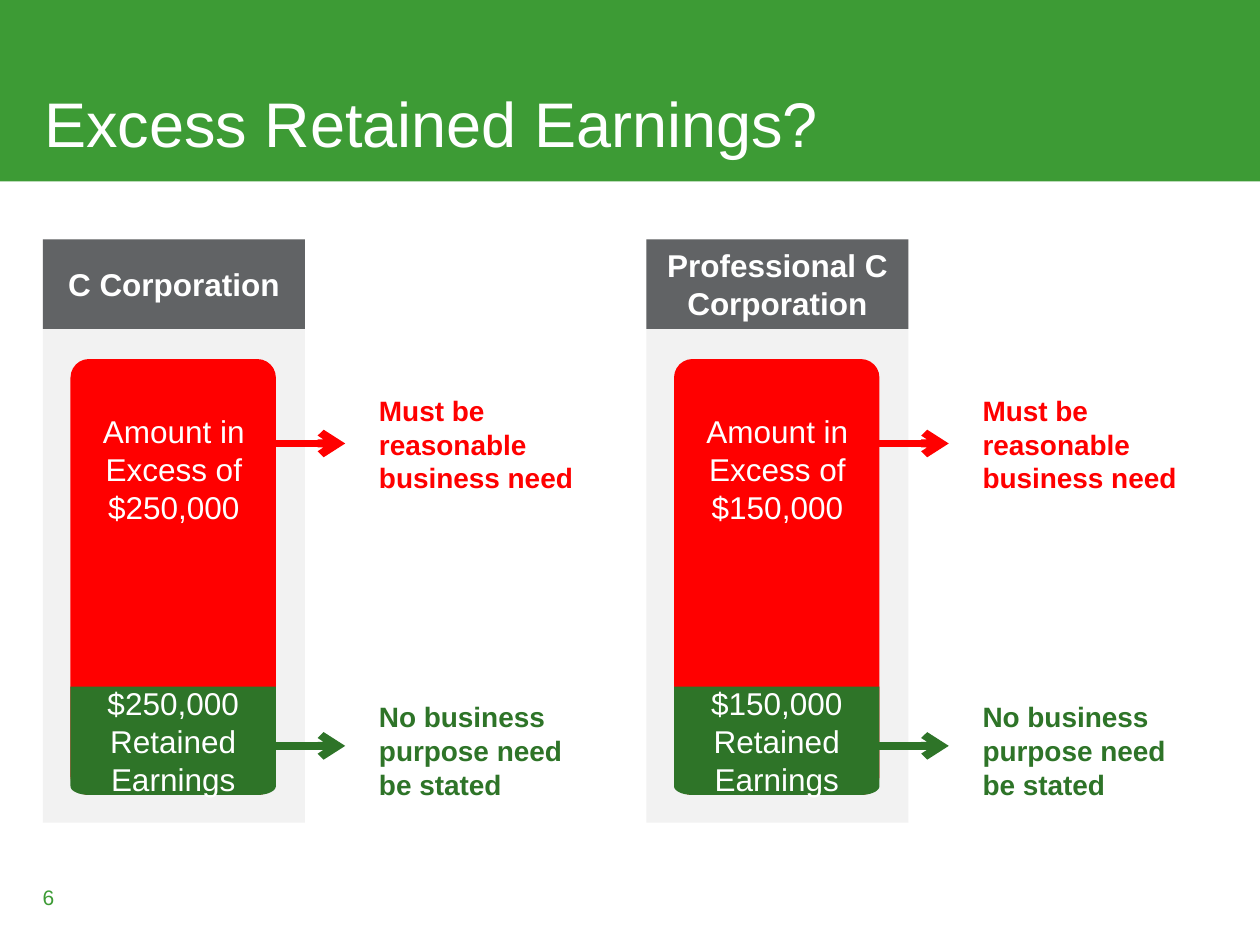
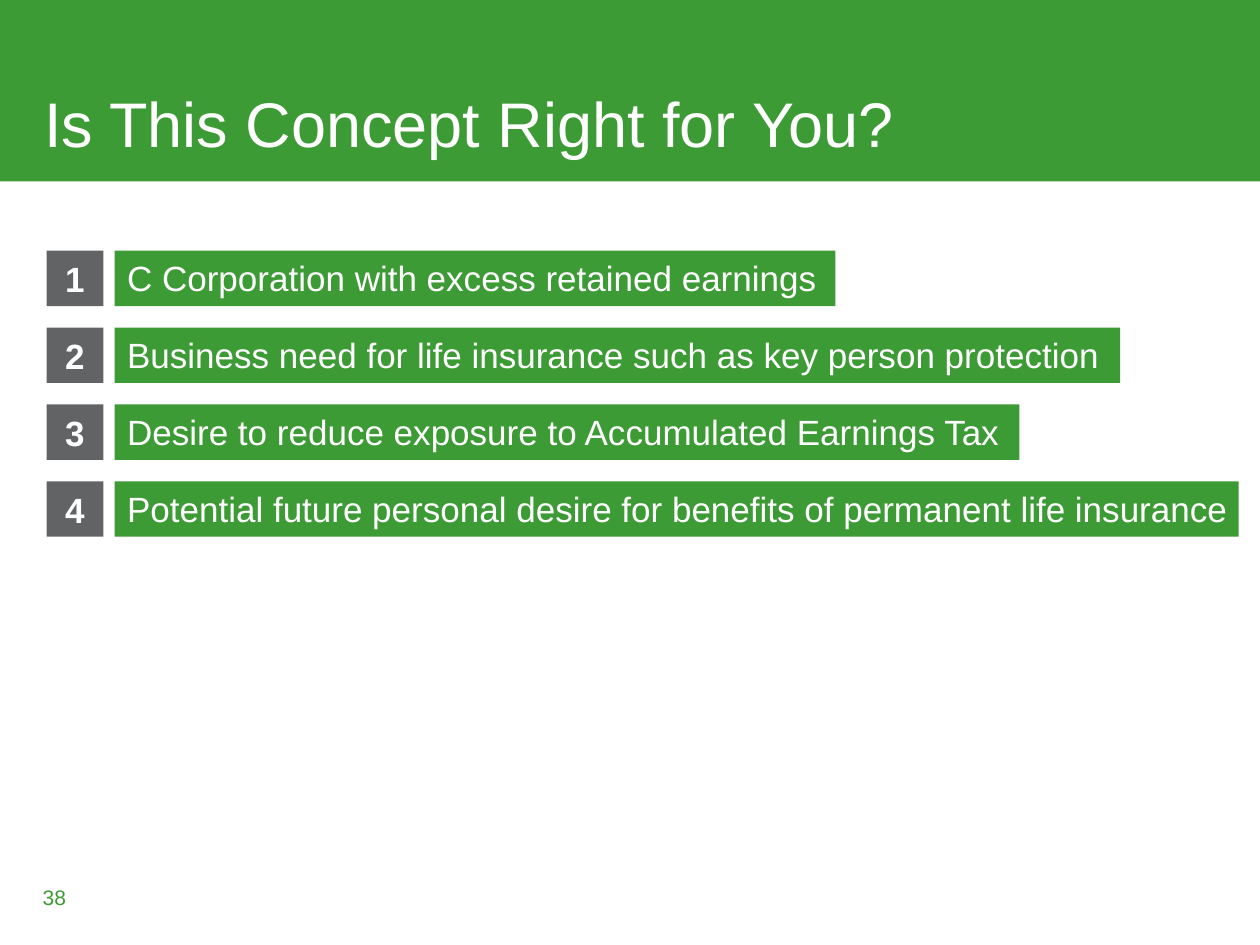
import math
from dataclasses import dataclass

from lxml import etree
from pptx import Presentation
from pptx.dml.color import RGBColor
from pptx.enum import shapes, text as text_enum
from pptx.oxml import parse_xml
from pptx.oxml.ns import qn
from pptx.util import Inches, Pt

GREEN = RGBColor(0x3D, 0x9B, 0x35)
DARK_GREEN = RGBColor(0x2E, 0x74, 0x28)
GREY = RGBColor(0x61, 0x63, 0x65)
PALE_GREY = RGBColor(0xF2, 0xF2, 0xF2)
RED = RGBColor(0xFF, 0x00, 0x00)
WHITE = RGBColor(0xFF, 0xFF, 0xFF)
FONT = "Arial"

ALIGN = text_enum.PP_ALIGN
ANCHOR = text_enum.MSO_ANCHOR
SHAPE = shapes.MSO_SHAPE

TEXT_SHADOW = (
    '<a:effectLst xmlns:a="http://schemas.openxmlformats.org/drawingml/2006/main">'
    '<a:outerShdw blurRad="38100" dist="38100" dir="2700000" algn="tl">'
    '<a:srgbClr val="000000"><a:alpha val="43000"/></a:srgbClr>'
    "</a:outerShdw></a:effectLst>"
)


@dataclass(frozen=True)
class Corporation:
    left: float
    heading: str
    limit: str


@dataclass(frozen=True)
class Callout:
    arrow_y: float
    text_top: float
    text: str
    color: RGBColor


@dataclass(frozen=True)
class Criterion:
    text: str
    width: float


CORPORATIONS = (
    Corporation(0.34, "C Corporation", "$250,000"),
    Corporation(5.13, "Professional C Corporation", "$150,000"),
)
CALLOUTS = (
    Callout(3.52, 3.07, "Must be reasonable business need", RED),
    Callout(5.92, 5.5, "No business purpose need be stated", DARK_GREEN),
)
CRITERIA = (
    Criterion("C Corporation with excess retained earnings", 5.72),
    Criterion("Business need for life insurance such as key person protection", 7.98),
    Criterion("Desire to reduce exposure to Accumulated Earnings Tax", 7.18),
    Criterion(
        "Potential future personal desire for benefits of permanent life insurance", 8.92
    ),
)


def set_text(box, text: str, *, size: float = 18, color: RGBColor = WHITE,
             bold: bool = False, align=ALIGN.LEFT, anchor=ANCHOR.MIDDLE,
             line_spacing: float = 1.0, shadow: bool = False) -> None:
    frame = box.text_frame
    frame.word_wrap = True
    frame.auto_size = text_enum.MSO_AUTO_SIZE.NONE
    frame.vertical_anchor = anchor
    para = frame.paragraphs[0]
    para.alignment = align
    para.line_spacing = line_spacing
    span = para.add_run()
    span.text = text
    span.font.name = FONT
    span.font.size = Pt(size)
    span.font.bold = bold
    span.font.color.rgb = color
    if shadow:
        fill = span.font._element.find(qn("a:solidFill"))
        fill.addnext(parse_xml(TEXT_SHADOW))


def paint(shape, color: RGBColor) -> None:
    """Give the shape a flat fill, without outline or shadow."""
    shape.shadow.inherit = False
    shape.fill.solid()
    shape.fill.fore_color.rgb = color
    shape.line.fill.background()


def add_block(page, left: float, top: float, width: float, height: float,
              color: RGBColor, kind=SHAPE.RECTANGLE):
    block = page.shapes.add_shape(
        kind, Inches(left), Inches(top), Inches(width), Inches(height))
    paint(block, color)
    return block


def add_text_box(page, left: float, top: float, width: float, height: float,
                 text: str, **text_format) -> None:
    box = page.shapes.add_textbox(
        Inches(left), Inches(top), Inches(width), Inches(height))
    set_text(box, text, **text_format)


def add_arrow(page, left: float, y: float, length: float, color: RGBColor) -> None:
    arrow = page.shapes.add_connector(
        shapes.MSO_CONNECTOR.STRAIGHT,
        Inches(left), Inches(y), Inches(left + length), Inches(y))
    arrow.line.color.rgb = color
    arrow.line.width = Pt(4.5)
    properties = arrow.element.spPr
    etree.SubElement(properties.find(qn("a:ln")), qn("a:tailEnd"), type="arrow")
    etree.SubElement(properties, qn("a:effectLst"))


def add_rounded_base(page, left: float, top: float, width: float, height: float):
    """Draw the green foot of a bar: square on top, elliptical corners below."""
    radius_x, radius_y, steps = 0.15, 0.07, 12
    right, bottom = left + width, top + height
    angles = [math.pi / 2 * step / steps for step in range(steps + 1)]
    right_corner = [
        (right - radius_x * (1 - math.cos(angle)),
         bottom - radius_y * (1 - math.sin(angle)))
        for angle in angles
    ]
    left_corner = [(left + right - x, y) for x, y in reversed(right_corner)]
    outline = [(right, top), *right_corner, *left_corner]
    builder = page.shapes.build_freeform(Inches(left), Inches(top))
    builder.add_line_segments([(Inches(x), Inches(y)) for x, y in outline], close=True)
    base = builder.convert_to_shape()
    paint(base, DARK_GREEN)
    return base


def add_page(deck, layout, title: str, number: int):
    page = deck.slides.add_slide(layout)
    set_text(page.shapes.title, title, size=36, anchor=ANCHOR.BOTTOM, line_spacing=0.9)
    add_text_box(page, 0.24, 6.92, 0.56, 0.4, str(number), size=12, color=GREEN)
    return page


def prepare_layout(layout) -> None:
    """Place the title for every page that uses the layout."""
    title = layout.placeholders[0]
    title.left, title.top = Inches(0.25), Inches(0.16)
    title.width, title.height = Inches(9.5), Inches(1.17)


def move_band_to_layout(page, layout) -> None:
    band = add_block(page, 0, 0, 10, 1.44, GREEN)
    layout.shapes.element.insert(2, band.element)


def add_corporation(page, corporation: Corporation) -> None:
    left = corporation.left
    bar_left, bar_width = left + 0.22, 1.63
    add_block(page, left, 1.9, 2.08, 4.63, PALE_GREY)
    heading = add_block(page, left, 1.9, 2.08, 0.71, GREY)
    set_text(heading, corporation.heading, bold=True, align=ALIGN.CENTER)

    bar = add_block(page, bar_left, 2.85, bar_width, 3.46, RED, SHAPE.ROUNDED_RECTANGLE)
    bar.adjustments[0] = 0.09
    base = add_rounded_base(page, bar_left, 5.45, bar_width, 0.86)
    set_text(base, f"{corporation.limit} Retained Earnings", align=ALIGN.CENTER)
    add_text_box(page, left + 0.31, 3.22, 1.46, 1.01,
                 f"Amount in Excess of {corporation.limit}",
                 align=ALIGN.CENTER, anchor=ANCHOR.TOP)

    for callout in CALLOUTS:
        add_arrow(page, bar_left + bar_width, callout.arrow_y, 0.55, callout.color)
        add_text_box(page, left + 2.57, callout.text_top, 1.93, 0.91, callout.text,
                     size=16, color=callout.color, bold=True, shadow=True)


def add_criterion(page, number: int, criterion: Criterion) -> None:
    top, height = 1.99 + 0.61 * (number - 1), 0.44
    bar = add_block(page, 0.91, top, criterion.width, height, GREEN)
    bar.text_frame.margin_right = 0
    set_text(bar, criterion.text, size=20, anchor=ANCHOR.TOP)
    badge = add_block(page, 0.37, top, 0.45, height, GREY)
    set_text(badge, str(number), size=20, bold=True, align=ALIGN.CENTER)


def main() -> None:
    deck = Presentation()
    deck.slide_width, deck.slide_height = Inches(10), Inches(7.5)
    layout = deck.slide_layouts.get_by_name("Title Only")
    prepare_layout(layout)

    earnings = add_page(deck, layout, "Excess Retained Earnings?", 6)
    move_band_to_layout(earnings, layout)
    for corporation in CORPORATIONS:
        add_corporation(earnings, corporation)

    concept = add_page(deck, layout, "Is This Concept Right for You?", 38)
    for number, criterion in enumerate(CRITERIA, start=1):
        add_criterion(concept, number, criterion)

    deck.save("out.pptx")


if __name__ == "__main__":
    main()
